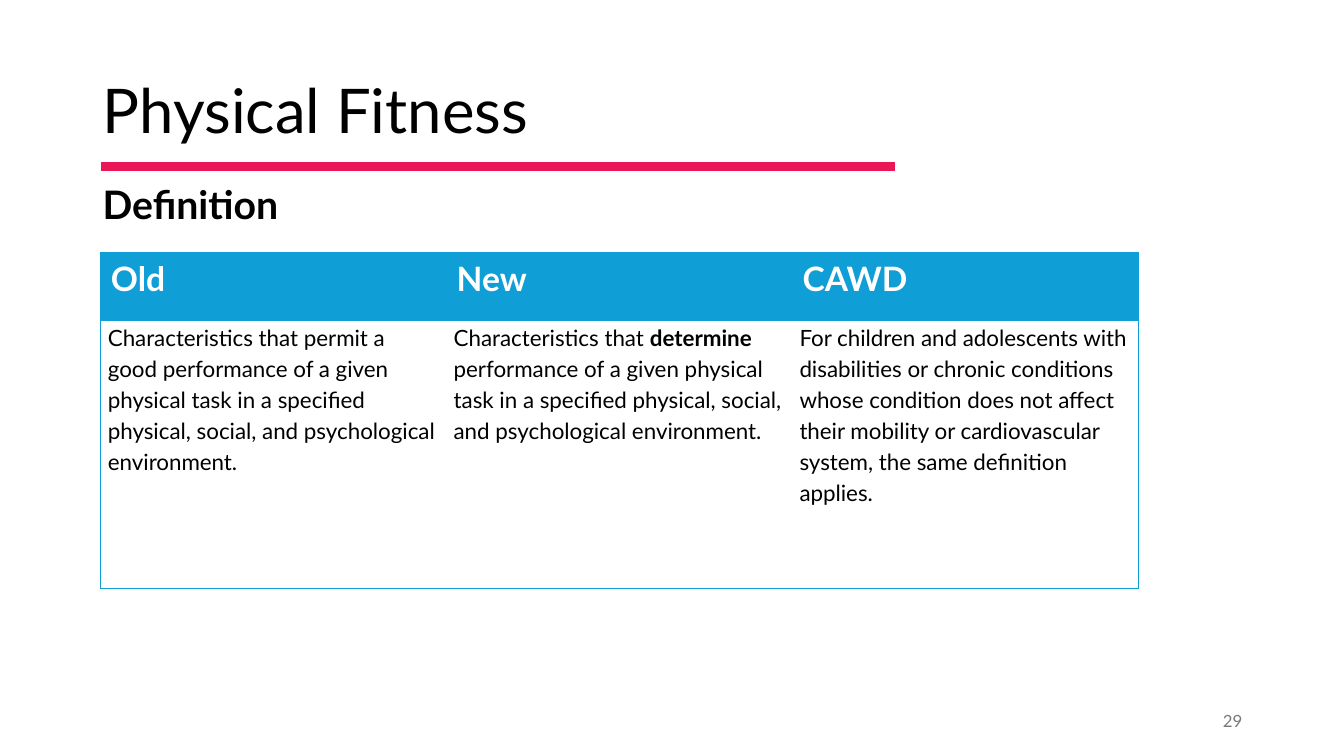
from dataclasses import dataclass
from lxml.etree import SubElement
from pptx import Presentation
from pptx.dml.color import RGBColor
from pptx.enum.shapes import MSO_CONNECTOR
from pptx.enum.text import MSO_ANCHOR, PP_ALIGN
from pptx.oxml import parse_xml
from pptx.oxml.ns import nsdecls, qn
from pptx.util import Inches, Pt


@dataclass(frozen=True)
class Theme:
    font: str = "Lato"
    black: str = "000000"
    white: str = "FFFFFF"
    gray: str = "797979"
    blue: str = "0F9ED5"
    pink: str = "EA1656"
    title: int = 44
    subtitle: int = 28
    header: int = 24
    body: int = 16
    number: int = 12


class SlideBuilder:
    def __init__(self, slide, theme):
        self.slide, self.theme = slide, theme

    def style(self, p, size, color, bold=False):
        p.font.name = self.theme.font
        p.font.size = Pt(size)
        p.font.bold = bold
        p.font.color.rgb = RGBColor.from_string(color)

    def text(self, text, box, size, color, bold=False,
             anchor=MSO_ANCHOR.MIDDLE, align=PP_ALIGN.LEFT, spacing=None):
        tf = self.slide.shapes.add_textbox(*map(Inches, box)).text_frame
        tf.word_wrap = True
        tf.vertical_anchor = anchor
        p = tf.paragraphs[0]
        p.text, p.alignment, p.line_spacing = text, align, spacing
        self.style(p, size, color, bold)

    def line(self, x1, x2, y, color, width):
        ln = self.slide.shapes.add_connector(
            MSO_CONNECTOR.STRAIGHT, *map(Inches, (x1, y, x2, y)))
        ln.line.color.rgb = RGBColor.from_string(color)
        ln.line.width = Pt(width)
        SubElement(ln._element.spPr, qn("a:effectLst"))

    def borders(self, cell, sides):
        tcPr = cell._tc.get_or_add_tcPr()
        for i, side in enumerate("LRTB"):
            paint = (f'<a:solidFill><a:srgbClr val="{self.theme.blue}"/></a:solidFill>'
                     if side in sides else "<a:noFill/>")
            tcPr.insert(i, parse_xml(
                f'<a:ln{side} {nsdecls("a")} w="{Pt(1)}">{paint}</a:ln{side}>'))

    def table(self, headers, bodies, box, heights):
        t, last = self.theme, len(headers) - 1
        table = self.slide.shapes.add_table(2, len(headers), *map(Inches, box)).table
        for row, height in zip(table.rows, heights):
            row.height = Inches(height)
        for col, (header, runs) in enumerate(zip(headers, bodies)):
            table.columns[col].width = Inches(box[2] / len(headers))
            edges = ("L" if col == 0 else "") + ("R" if col == last else "")
            head, body = table.cell(0, col), table.cell(1, col)

            # Header cell
            p = head.text_frame.paragraphs[0]
            p.text = header
            self.style(p, t.header, t.white, True)

            # Definition cell; every second run is emphasised
            body.margin_left = body.margin_right = Inches(0.07)
            body.margin_top = body.margin_bottom = 0
            p = body.text_frame.paragraphs[0]
            p.line_spacing, p.space_after = 1.16, Pt(8)
            self.style(p, t.body, t.black)
            for i, text in enumerate(runs):
                r = p.add_run()
                r.text = text
                if i % 2:
                    r.font.bold = True

            for cell, fill, sides in ((head, t.blue, "T"), (body, t.white, "TB")):
                cell.fill.solid()
                cell.fill.fore_color.rgb = RGBColor.from_string(fill)
                self.borders(cell, edges + sides)


HEADERS = ["Old", "New", "CAWD"]
DEFINITIONS = [
    ["Characteristics that permit a good performance of a given physical task "
     "in a specified physical, social, and psychological environment."],
    ["Characteristics that ", "determine",
     " performance of a given physical task in a specified physical, social, "
     "and psychological environment."],
    ["For children and adolescents with disabilities or chronic conditions whose "
     "condition does not affect their mobility or cardiovascular system, "
     "the same definition applies."],
]


def main():
    prs = Presentation()
    prs.slide_width, prs.slide_height = Inches(13.33), Inches(7.5)
    t = Theme()
    s = SlideBuilder(prs.slides.add_slide(prs.slide_layouts[6]), t)

    # Title, rule and subtitle
    s.text("Physical Fitness", (0.92, 0.4, 11.5, 1.45), t.title, t.black, spacing=0.9)
    s.line(1, 8.88, 1.65, t.pink, 6)
    s.text("Definition", (0.92, 1.74, 2.81, 0.57), t.subtitle, t.black,
           bold=True, anchor=MSO_ANCHOR.TOP)

    # Definitions side by side
    s.table(HEADERS, DEFINITIONS, (1, 2.51, 10.29, 3.33), (0.67, 2.66))

    # Slide number
    s.text("29", (9.42, 6.95, 3, 0.4), t.number, t.gray, align=PP_ALIGN.RIGHT)

    prs.save("out.pptx")


if __name__ == "__main__":
    main()
